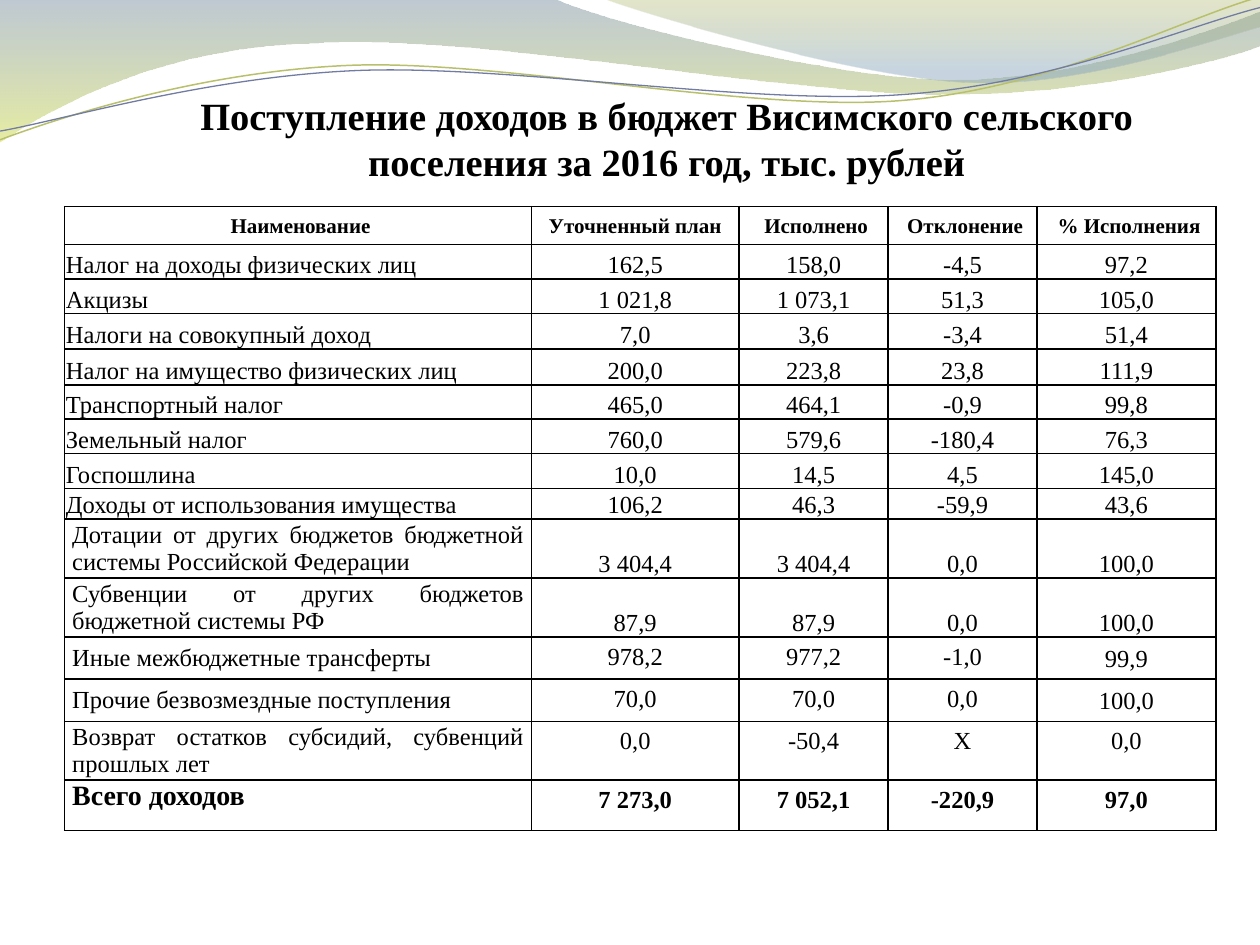
from dataclasses import dataclass

from lxml import etree
from pptx import Presentation
from pptx import util as u
from pptx.dml.color import RGBColor
from pptx.enum import text
from pptx.oxml import ns

Pt = u.Pt
FONT = "Times New Roman"
COLORS = {
    "ink": "000000",
    "slate": "72889B",
    "lime": "D3DE57",
    "olive": "A4AC50",
    "sky": "84A3BD",
    "green_line": "B9C06C",
    "blue_line": "727CA3",
}
LEFT, CENTER, JUSTIFY = text.PP_ALIGN.LEFT, text.PP_ALIGN.CENTER, text.PP_ALIGN.JUSTIFY
TOP, MIDDLE, BOTTOM = (
    text.MSO_ANCHOR.TOP, text.MSO_ANCHOR.MIDDLE, text.MSO_ANCHOR.BOTTOM)


@dataclass(frozen=True)
class Stop:
    position: float
    color: str
    opacity: int


@dataclass(frozen=True)
class Wave:
    start: tuple
    segments: tuple
    stops: tuple = ()
    line_color: str = ""
    line_width: float = 0


@dataclass(frozen=True)
class CellStyle:
    align: text.PP_ALIGN
    anchor: text.MSO_ANCHOR
    margins: tuple = (7.2, 3.6, 7.2, 3.6)
    size: float = 14
    bold: bool = False


@dataclass(frozen=True)
class RowStyle:
    name: CellStyle
    amount: CellStyle
    percent: CellStyle


@dataclass(frozen=True)
class Income:
    height: float
    style: RowStyle
    values: tuple


TIGHT = (0.7, 0.7, 0.7, 0)
SIDES = (4.3, 0, 4.3, 0)
heading = CellStyle(CENTER, BOTTOM, size=12, bold=True)
tight_amount = CellStyle(CENTER, BOTTOM, TIGHT)
top_amount = CellStyle(CENTER, TOP)
low_amount = CellStyle(CENTER, BOTTOM)
total_amount = CellStyle(CENTER, TOP, bold=True)
wide_name = CellStyle(JUSTIFY, MIDDLE, SIDES)

HEADER = RowStyle(heading, heading, heading)
TAX = RowStyle(CellStyle(LEFT, BOTTOM, TIGHT), tight_amount, tight_amount)
GRANT = RowStyle(wide_name, tight_amount, tight_amount)
TRANSFER = RowStyle(wide_name, top_amount, low_amount)
REFUND = RowStyle(wide_name, top_amount, top_amount)
TOTAL = RowStyle(CellStyle(LEFT, TOP, SIDES, 16, True), total_amount, total_amount)

COLUMN_WIDTHS = (266.6, 118.8, 85.1, 85.1, 102.2)
INCOMES = (
    Income(21.8, HEADER, (" Наименование", "Уточненный план", " Исполнено",
                          " Отклонение", " % Исполнения")),
    Income(19.7, TAX, ("Налог на доходы физических лиц", "162,5", "158,0", "-4,5", "97,2")),
    Income(19.8, TAX, ("Акцизы", "1 021,8", "1 073,1", "51,3", "105,0")),
    Income(20.2, TAX, ("Налоги на совокупный доход", "7,0", "3,6", "-3,4", "51,4")),
    Income(20.5, TAX, ("Налог на имущество физических лиц", "200,0", "223,8", "23,8", "111,9")),
    Income(19.5, TAX, ("Транспортный налог", "465,0", "464,1", "-0,9", "99,8")),
    Income(19.8, TAX, ("Земельный налог", "760,0", "579,6", "-180,4", "76,3")),
    Income(19.9, TAX, ("Госпошлина", "10,0", "14,5", "4,5", "145,0")),
    Income(17.4, TAX, ("Доходы от использования имущества", "106,2", "46,3", "-59,9", "43,6")),
    Income(33.7, GRANT, ("Дотации от других бюджетов бюджетной системы Российской Федерации",
                         "3 404,4", "3 404,4", "0,0", "100,0")),
    Income(33.8, GRANT, ("Субвенции от других бюджетов бюджетной системы РФ",
                         "87,9", "87,9", "0,0", "100,0")),
    Income(24, TRANSFER, ("Иные межбюджетные трансферты", "978,2", "977,2", "-1,0", "99,9")),
    Income(24, TRANSFER, ("Прочие безвозмездные поступления", "70,0", "70,0", "0,0", "100,0")),
    Income(33.7, REFUND, ("Возврат остатков субсидий, субвенций прошлых лет",
                          "0,0", "-50,4", "Х", "0,0")),
    Income(28.8, TOTAL, ("Всего доходов", "7 273,0", "7 052,1", "-220,9", "97,0")),
)

WAVES = (
    Wave((0, 0), (
        (316.8, -0.7),
        (342.7, 12.2, 478.1, 45.4, 545.8, 45.4),
        (614.2, 45.4, 689.8, 18.7, 720, 6.5),
        (720.7, 25.9),
        (707.8, 31.7, 626.4, 54.7, 537.1, 54),
        (447.8, 54, 275, 20.2, 185, 24.5),
        (92.9, 25.9, 33.1, 59.8, -0.7, 81.4),
    ), stops=(Stop(0, "slate", 45), Stop(1, "lime", 55))),
    Wave((344.9, -0.7), (
        (366.5, 7.9, 491, 44.6, 553.7, 46.8),
        (616.3, 49.7, 691.9, 23, 720, 15.1),
        (720, 0),
    ), stops=(Stop(0, "olive", 30), Stop(0.8, "sky", 45))),
    Wave((0, 79.9), (
        (34.6, 67, 113.8, 41, 199.4, 37.4),
        (284.4, 33.8, 427, 64.1, 513.4, 57.6),
        (599.8, 51.1, 675.4, 10.8, 718.6, -1.4),
    ), line_color="green_line", line_width=0.85),
    Wave((0, 74.9), (
        (33.8, 69.1, 118.1, 43.9, 203.8, 40.3),
        (290.2, 36.7, 429.8, 60.5, 516.2, 54),
        (601.9, 48.2, 677.5, 15.1, 720, 4.3),
    ), line_color="blue_line", line_width=0.75),
)


def rgb(name: str) -> RGBColor:
    return RGBColor.from_string(COLORS[name])


def bend_segments(band, segments: tuple) -> None:
    sides = iter(list(band._element.spPr.iter(ns.qn("a:lnTo"))))
    for segment in segments:
        controls = [next(sides) for _ in range(len(segment) // 2)]
        if len(controls) == 1:
            continue
        curve = etree.Element(ns.qn("a:cubicBezTo"))
        controls[0].addprevious(curve)
        for control in controls:
            curve.append(control[0])
            control.getparent().remove(control)


def draw_wave(shapes, wave: Wave) -> None:
    corners = [(Pt(x), Pt(y)) for segment in wave.segments
               for x, y in zip(segment[::2], segment[1::2])]
    builder = shapes.build_freeform(*map(Pt, wave.start))
    builder.add_line_segments(corners, close=bool(wave.stops))
    band = builder.convert_to_shape()
    bend_segments(band, wave.segments)
    band.shadow.inherit = False
    if not wave.stops:
        band.fill.background()
        band.line.color.rgb = rgb(wave.line_color)
        band.line.width = Pt(wave.line_width)
        return
    band.line.fill.background()
    band.fill.gradient()
    band.fill.gradient_angle = 270
    for gradient_stop, stop in zip(band.fill.gradient_stops, wave.stops):
        gradient_stop.position = stop.position
        gradient_stop.color.rgb = rgb(stop.color)
    for tone, stop in zip(band._element.spPr.iter(ns.qn("a:srgbClr")), wave.stops):
        etree.SubElement(tone, ns.qn("a:alpha"), val=str(stop.opacity * 1000))


def write(paragraph, words: str, align, size: float, bold: bool) -> None:
    paragraph.text = words
    paragraph.alignment = align
    font = paragraph.font
    font.name, font.size, font.bold = FONT, Pt(size), bold
    font.color.rgb = rgb("ink")


def draw_borders(cell) -> None:
    properties = cell._tc.get_or_add_tcPr()
    for index, side in enumerate(("lnL", "lnR", "lnT", "lnB")):
        border = etree.Element(ns.qn(f"a:{side}"), w=str(Pt(1)))
        ink = etree.SubElement(border, ns.qn("a:solidFill"))
        etree.SubElement(ink, ns.qn("a:srgbClr"), val=COLORS["ink"])
        properties.insert(index, border)


def fill_cell(cell, words: str, style: CellStyle) -> None:
    cell.margin_left, cell.margin_top, cell.margin_right, cell.margin_bottom = map(
        Pt, style.margins)
    cell.vertical_anchor = style.anchor
    cell.fill.background()
    draw_borders(cell)
    write(cell.text_frame.paragraphs[0], words, style.align, style.size, style.bold)


def draw_incomes(shapes) -> None:
    incomes = shapes.add_table(
        len(INCOMES), len(COLUMN_WIDTHS), Pt(37), Pt(118), Pt(sum(COLUMN_WIDTHS)),
        Pt(sum(income.height for income in INCOMES))).table
    incomes.first_row = incomes.horz_banding = False
    for column, width in zip(incomes.columns, COLUMN_WIDTHS):
        column.width = Pt(width)
    for row, income in zip(incomes.rows, INCOMES):
        row.height = Pt(income.height)
        style = income.style
        styles = (style.name, *[style.amount] * 3, style.percent)
        for cell, words, cell_style in zip(row.cells, income.values, styles):
            fill_cell(cell, words, cell_style)


def main() -> None:
    deck = Presentation()
    deck.slide_width, deck.slide_height = Pt(720), Pt(540)
    slide = deck.slides.add_slide(deck.slide_layouts[6])
    for wave in WAVES:
        draw_wave(slide.shapes, wave)
    title = slide.shapes.add_textbox(Pt(56.2), Pt(49), Pt(649.4), Pt(60.5)).text_frame
    title.word_wrap = True
    write(title.paragraphs[0],
          "Поступление доходов в бюджет Висимского сельского поселения за 2016 год, тыс. рублей",
          CENTER, 22, True)
    draw_incomes(slide.shapes)
    deck.save("out.pptx")


if __name__ == "__main__":
    main()
